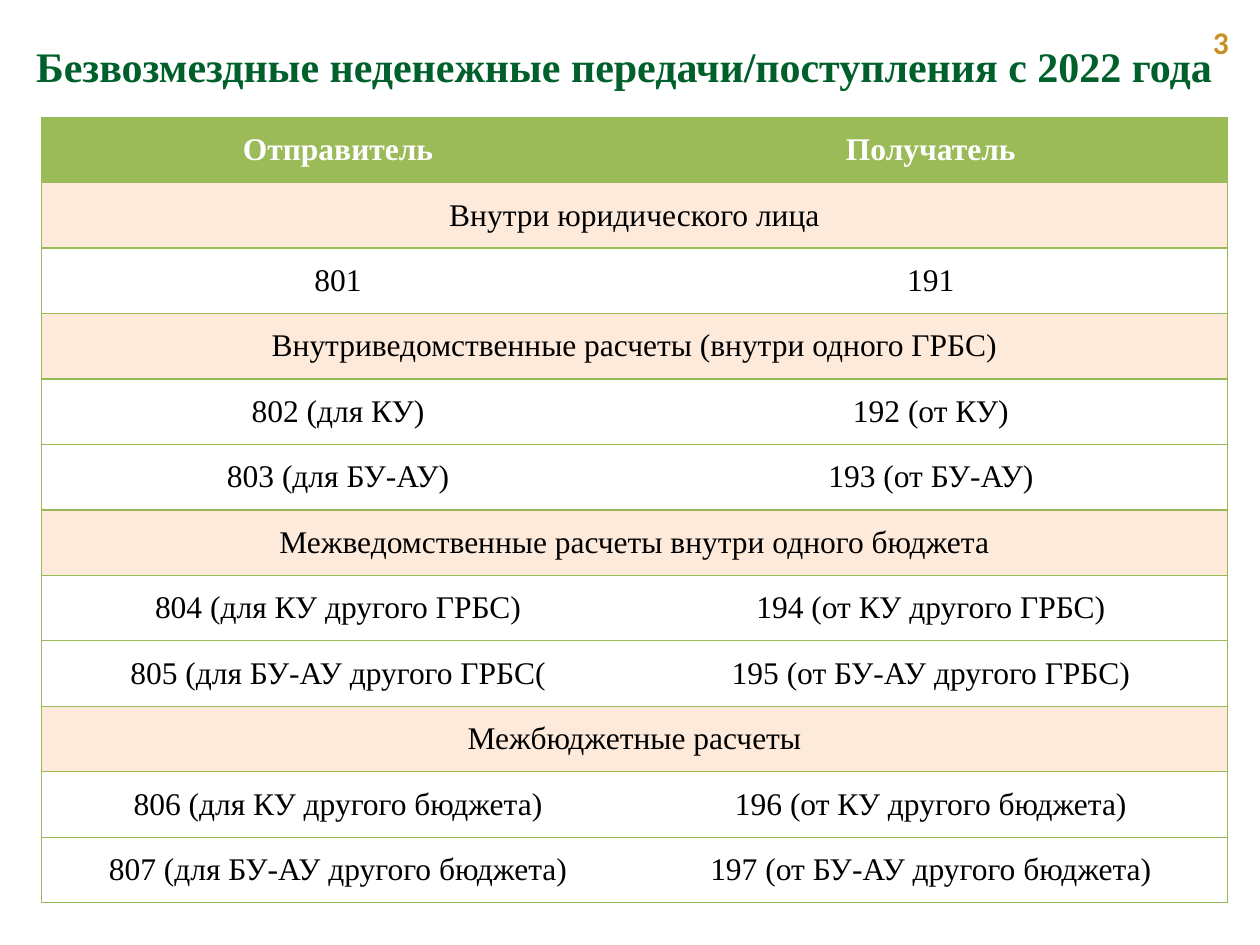
from lxml import etree
from pptx import Presentation
from pptx.dml.color import RGBColor
from pptx.enum.text import MSO_ANCHOR, PP_ALIGN
from pptx.oxml.ns import qn
from pptx.util import Cm, Pt

MID = MSO_ANCHOR.MIDDLE
CENTER = PP_ALIGN.CENTER
RIGHT = PP_ALIGN.RIGHT

SERIF = "Times New Roman"
SANS = "Calibri"
DARK = "00602B"
GOLD = "C79023"
GREEN = "9BBB59"
EDGE = "98B955"
PEACH = "FDEADA"
WHITE = "FFFFFF"
BLACK = "000000"

HEAD = ("Отправитель", "Получатель")
ROWS = [
    ("Внутри юридического лица",),
    ("801", "191"),
    ("Внутриведомственные расчеты (внутри одного ГРБС)",),
    ("802 (для КУ)", "192 (от КУ)"),
    ("803 (для БУ-АУ)", "193 (от БУ-АУ)"),
    ("Межведомственные расчеты внутри одного бюджета",),
    ("804 (для КУ другого ГРБС)", "194 (от КУ другого ГРБС)"),
    ("805 (для БУ-АУ другого ГРБС(", "195 (от БУ-АУ другого ГРБС)"),
    ("Межбюджетные расчеты",),
    ("806 (для КУ другого бюджета)", "196 (от КУ другого бюджета)"),
    ("807 (для БУ-АУ другого бюджета)", "197 (от БУ-АУ другого бюджета)"),
]


def color(code):
    return RGBColor.from_string(code)


class Deck:
    def __init__(self, slide, size=18, font=SERIF):
        self.slide = slide
        self.size = size
        self.font = font

    def add_text(self, frame, text, tint, bold=False, align=CENTER, size=None, font=None):
        par = frame.paragraphs[0]
        par.alignment = align
        run = par.add_run()
        run.text = text
        run.font.name = font or self.font
        run.font.size = Pt(size or self.size)
        run.font.bold = bold
        run.font.color.rgb = color(tint)

    def label(self, box, text, tint, **style):
        frame = self.slide.shapes.add_textbox(*map(Cm, box)).text_frame
        frame.word_wrap = True
        frame.vertical_anchor = MID
        self.add_text(frame, text, tint, bold=True, **style)

    def border(self, cell, sides):
        props = cell._tc.get_or_add_tcPr()
        for side in "LRTB":
            line = etree.SubElement(props, qn(f"a:ln{side}"), w=str(Pt(0.75)))
            if side in sides:
                fill = etree.SubElement(line, qn("a:solidFill"))
                etree.SubElement(fill, qn("a:srgbClr"), val=EDGE)
            else:
                etree.SubElement(line, qn("a:noFill"))

    def paint(self, cell, fill):
        if fill:
            cell.fill.solid()
            cell.fill.fore_color.rgb = color(fill)
        else:
            cell.fill.background()

    def table(self, box, head, rows):
        lines = [head] + rows
        grid = self.slide.shapes.add_table(len(lines), len(head), *map(Cm, box)).table
        for y, texts in enumerate(lines):
            group = len(texts) == 1
            fill = GREEN if y == 0 else PEACH if group else None
            for x, sides in enumerate(("LTB", "RTB")):
                cell = grid.cell(y, x)
                self.border(cell, "LRTB" if group else sides)
                self.paint(cell, fill)
            if group:
                grid.cell(y, 0).merge(grid.cell(y, 1))
            for x, text in enumerate(texts):
                cell = grid.cell(y, x)
                cell.vertical_anchor = MID
                self.add_text(cell.text_frame, text, BLACK if y else WHITE, bold=y == 0)


def main():
    prs = Presentation()
    prs.slide_width = Cm(25.4)
    prs.slide_height = Cm(19.05)
    deck = Deck(prs.slides.add_slide(prs.slide_layouts[6]))
    deck.label((0, 0.66, 25.17, 1.35),
               "Безвозмездные неденежные передачи/поступления с 2022 года",
               DARK, size=24)
    deck.label((23.27, 0.33, 1.75, 1.02), "3", GOLD, align=RIGHT, font=SANS)
    deck.table((0.84, 2.36, 23.9, 15.85), HEAD, ROWS)
    prs.save("out.pptx")


if __name__ == "__main__":
    main()
